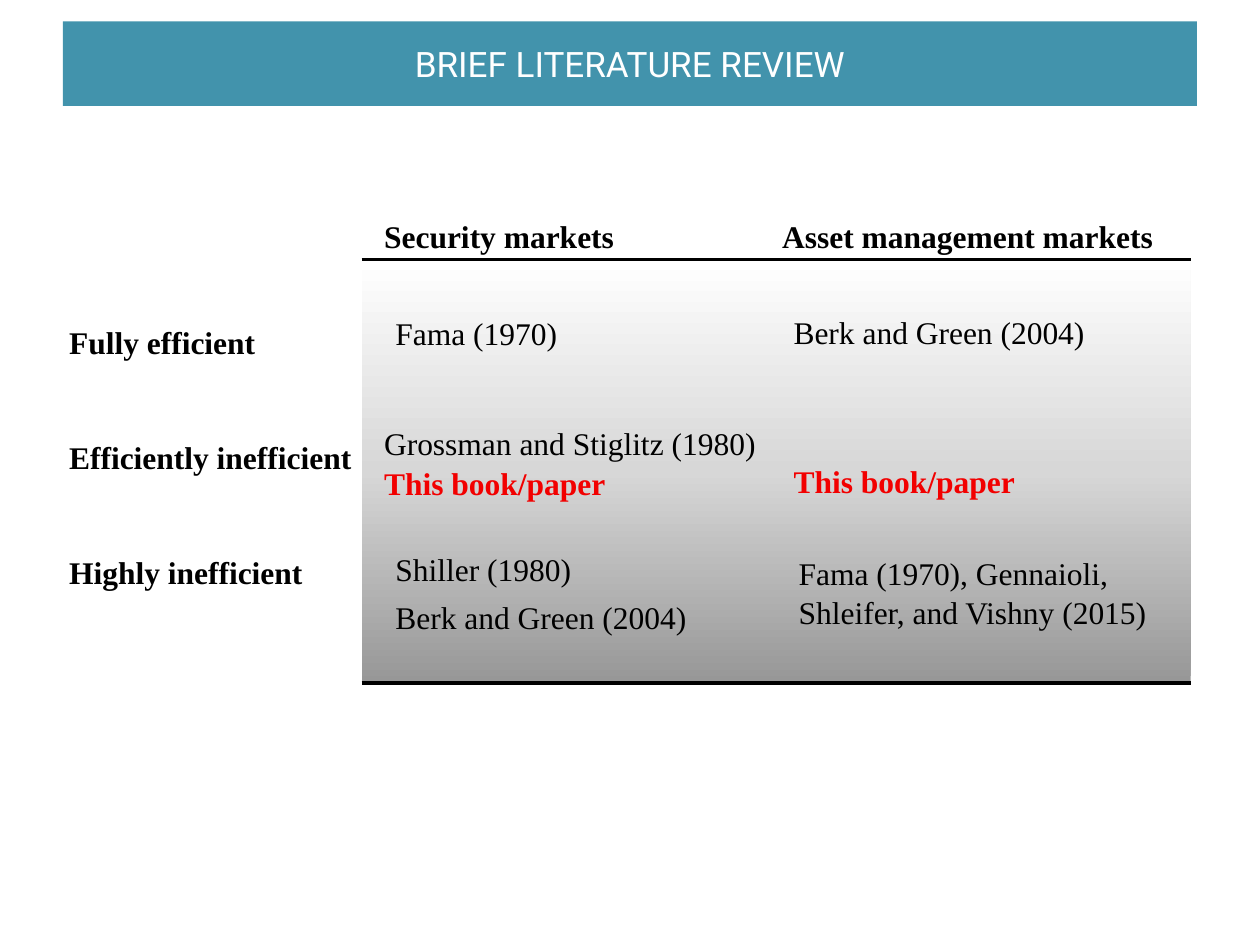
from lxml import etree
from pptx import Presentation
from pptx import util as u
from pptx.dml.color import RGBColor
from pptx.enum import shapes, text
from pptx.oxml import parse_xml
from pptx.oxml.ns import nsdecls

SERIF = "Times New Roman"
BLACK, WHITE, RED, TEAL = "000000", "FFFFFF", "F20000", "4293AC"
SHADES = [(0, "979797"), (50, "D7D7D7"), (100, WHITE)]


def color(value):
    return RGBColor.from_string(value)


def style(p, size, font, fill, bold=False):
    for r in p.runs:
        r.font.size = u.Pt(size)
        r.font.name = font
        r.font.bold = bold
        r.font.color.rgb = color(fill)


def add_title(slide, title):
    sp = slide.shapes.add_shape(shapes.MSO_SHAPE.RECTANGLE, u.Inches(0.5),
                                u.Inches(0.17), u.Inches(9), u.Inches(0.67))
    sp.shadow.inherit = False
    sp.fill.solid()
    sp.fill.fore_color.rgb = color(TEAL)
    sp.line.fill.background()
    tf = sp.text_frame
    tf.text = title
    tf.vertical_anchor = text.MSO_ANCHOR.MIDDLE
    p = tf.paragraphs[0]
    p.alignment = text.PP_ALIGN.CENTER
    style(p, 20, "Roboto", WHITE)


def shade_cell(cell):
    """Vertical gradient with a rule above and below."""
    tc_pr = cell._tc.get_or_add_tcPr()
    for side in ("lnL", "lnR", "lnT", "lnB"):
        if side in ("lnT", "lnB"):
            width = u.Pt(2.25)
            fill = f'<a:solidFill><a:srgbClr val="{BLACK}"/></a:solidFill>'
        else:
            width, fill = 0, "<a:noFill/>"
        tc_pr.append(parse_xml(
            f'<a:{side} {nsdecls("a")} w="{width}">{fill}</a:{side}>'))
    grad = parse_xml(f'<a:gradFill {nsdecls("a")}><a:gsLst/>'
                     '<a:lin ang="16200000" scaled="0"/></a:gradFill>')
    for pos, shade in SHADES:
        stop = etree.SubElement(grad[0], grad[0].tag[:-5] + "gs",
                                pos=str(pos * 1000))
        etree.SubElement(stop, grad[0].tag[:-5] + "srgbClr", val=shade)
    tc_pr.append(grad)


def add_panel(slide):
    table = slide.shapes.add_table(1, 2, u.Inches(2.87), u.Inches(2.06),
                                   u.Inches(6.58), u.Inches(3.36)).table
    table.first_row = table.horz_banding = False
    for cell in table.iter_cells():
        shade_cell(cell)


def add_text(slide, x, y, w, h, lines, gap=0):
    """Lines are (wording, colour, bold); gap is the space between them."""
    sp = slide.shapes.add_textbox(u.Inches(x), u.Inches(y),
                                  u.Inches(w), u.Inches(h))
    tf = sp.text_frame
    tf.word_wrap = True
    for i, (words, fill, bold) in enumerate(lines):
        p = tf.paragraphs[0] if i == 0 else tf.add_paragraph()
        p.text = words
        p.line_spacing = 1.05
        if i:
            p.space_before = u.Pt(gap)
        style(p, 18, SERIF, fill, bold)


def main():
    prs = Presentation()
    prs.slide_width, prs.slide_height = u.Inches(10), u.Inches(7.5)
    slide = prs.slides.add_slide(prs.slide_layouts[6])

    add_panel(slide)
    add_title(slide, "BRIEF LITERATURE REVIEW")

    # Column headings
    add_text(slide, 2.95, 1.66, 2.61, 0.4, [("Security markets", BLACK, True)])
    add_text(slide, 6.11, 1.66, 3.3, 0.4,
             [("Asset management markets", BLACK, True)])

    # Row headings
    rows = ["Fully efficient", "Efficiently inefficient", "Highly inefficient"]
    add_text(slide, 0.45, 2.5, 2.55, 2.22,
             [(row, BLACK, True) for row in rows], gap=43)

    # Security markets
    this_work = ("This book/paper", RED, True)
    add_text(slide, 3.04, 2.43, 2.67, 0.4, [("Fama (1970)", BLACK, False)])
    add_text(slide, 2.95, 3.3, 3.5, 0.71,
             [("Grossman and Stiglitz (1980)", BLACK, False), this_work])
    add_text(slide, 3.04, 4.3, 2.67, 0.4, [("Shiller (1980)", BLACK, False)])
    add_text(slide, 3.04, 4.68, 2.67, 0.4,
             [("Berk and Green (2004)", BLACK, False)])

    # Asset management markets
    add_text(slide, 6.2, 2.42, 2.67, 0.4,
             [("Berk and Green (2004)", BLACK, False)])
    add_text(slide, 6.2, 3.6, 2.67, 0.4, [this_work])
    add_text(slide, 6.24, 4.33, 3.3, 0.71,
             [("Fama (1970), Gennaioli, Shleifer, and Vishny (2015)",
               BLACK, False)])

    prs.save("out.pptx")


if __name__ == "__main__":
    main()
